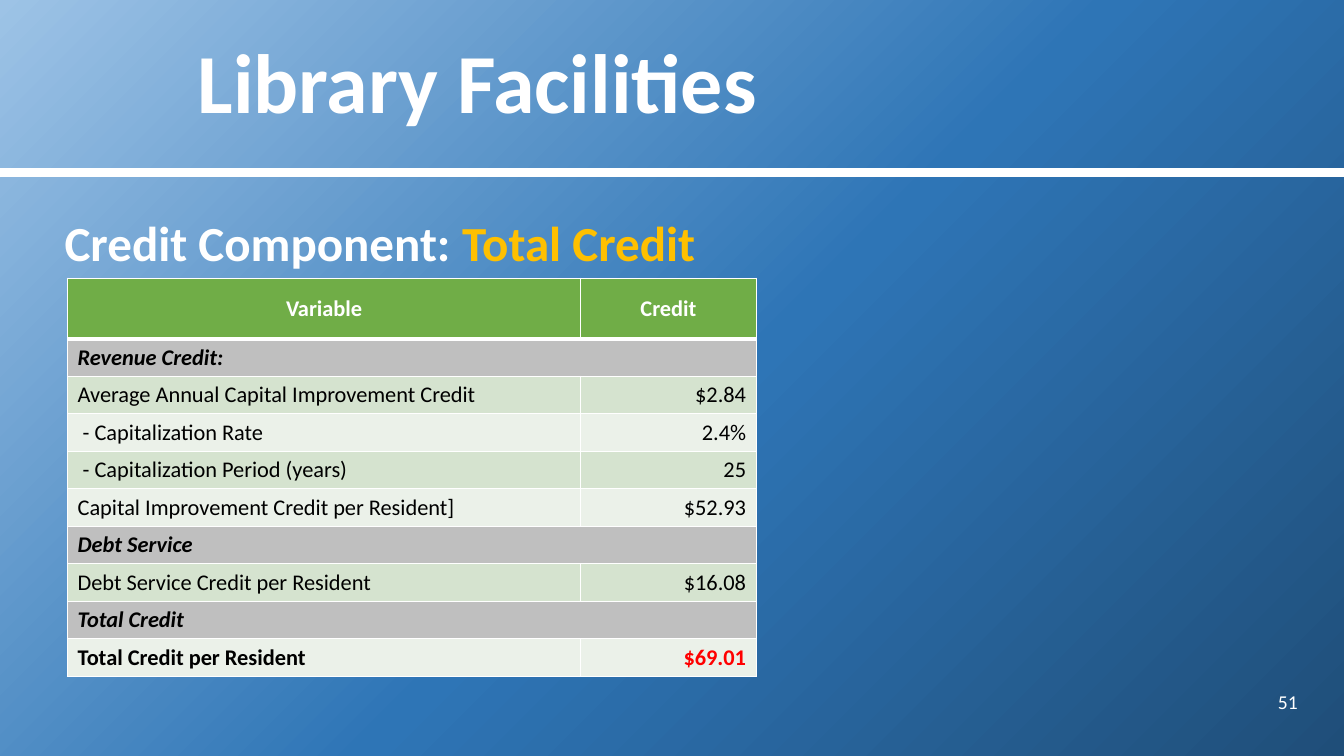
from pptx import Presentation
from pptx.dml.color import RGBColor
from pptx.enum.shapes import MSO_CONNECTOR
from pptx.enum.text import MSO_ANCHOR, MSO_AUTO_SIZE, PP_ALIGN
from pptx.oxml import parse_xml
from pptx.oxml.ns import nsdecls, qn
from pptx.util import Inches, Pt

WHITE = RGBColor(0xFF, 0xFF, 0xFF)
BLACK = RGBColor(0, 0, 0)
RED = RGBColor(0xFF, 0, 0)
GOLD = RGBColor(0xFF, 0xC0, 0)
GREEN = RGBColor(0x70, 0xAD, 0x47)
GRAY = RGBColor(0xBF, 0xBF, 0xBF)
DARK_BAND = RGBColor(0xD5, 0xE3, 0xCF)
LIGHT_BAND = RGBColor(0xEB, 0xF1, 0xE9)
SKY = RGBColor(0x9D, 0xC3, 0xE6)
BLUE = RGBColor(0x2E, 0x75, 0xB6)
NAVY = RGBColor(0x1F, 0x4E, 0x79)


def place(shape, left, top, width, height, anchor):
    bounds = {"left": left, "top": top, "width": width, "height": height}
    for name, value in bounds.items():
        setattr(shape, name, Inches(value))
    layout = {"word_wrap": True, "auto_size": MSO_AUTO_SIZE.NONE, "vertical_anchor": anchor}
    for name, value in layout.items():
        setattr(shape.text_frame, name, value)
    return shape.text_frame.paragraphs[0]


def write(para, text, size, color, bold=False, italic=False):
    span = para.add_run()
    span.text = text
    styles = {"name": "Calibri", "size": Pt(size), "bold": bold, "italic": italic}
    for name, value in styles.items():
        setattr(span.font, name, value)
    span.font.color.rgb = color
    return span


deck = Presentation()
deck.slide_width = Inches(13.33)
deck.slide_height = Inches(7.5)
page = deck.slides.add_slide(deck.slide_layouts[1])

page.background.fill.gradient()
stops = "".join(
    f'<a:gs pos="{share * 1000}"><a:srgbClr val="{color}"/></a:gs>'
    for share, color in [(0, SKY), (53, BLUE), (100, NAVY)]
)
gradient = page.element.find(".//" + qn("a:gradFill"))
gradient.getparent().replace(gradient, parse_xml(
    f'<a:gradFill {nsdecls("a")} rotWithShape="1"><a:gsLst>{stops}</a:gsLst>'
    '<a:path path="circle"><a:fillToRect r="100000" b="100000"/></a:path></a:gradFill>'
))

rule = page.shapes.add_connector(
    MSO_CONNECTOR.STRAIGHT, Inches(-0.02), Inches(1.71), Inches(13.33), Inches(1.71))
rule.line.color.rgb = WHITE
rule.line.width = Pt(6)
rule.element.spPr.append(parse_xml(f'<a:effectLst {nsdecls("a")}/>'))

para = place(page.shapes.title, 1.86, 0, 11.1, 1.71, MSO_ANCHOR.MIDDLE)
para.alignment = PP_ALIGN.LEFT
para.line_spacing = 0.9
span = write(para, "Library Facilities", 60, WHITE, bold=True)
span.font.fill._xPr.find(qn("a:solidFill")).addnext(parse_xml(
    f'<a:effectLst {nsdecls("a")}><a:outerShdw blurRad="38100" dist="38100" dir="2700000">'
    '<a:srgbClr val="000000"><a:alpha val="43000"/></a:srgbClr></a:outerShdw></a:effectLst>'
))

para = place(page.placeholders[1], 0.54, 1.94, 12.42, 5.27, MSO_ANCHOR.TOP)
properties = para._p.get_or_add_pPr()
properties.set("marL", "0")
properties.set("indent", "0")
properties.append(parse_xml(f'<a:buNone {nsdecls("a")}/>'))
para.alignment = PP_ALIGN.LEFT
para.line_spacing = 1.2
para.space_before = Pt(0)
write(para, "Credit Component: ", 35, WHITE, bold=True)
write(para, "Total Credit", 35, GOLD, bold=True)

box = page.shapes.add_textbox(0, 0, 0, 0)
para = place(box, 12.08, 6.76, 0.89, 0.4, MSO_ANCHOR.MIDDLE)
para.alignment = PP_ALIGN.RIGHT
write(para, "51", 14, WHITE)

rows = [
    ("Variable", "Credit"),
    ("Revenue Credit:", None),
    ("Average Annual Capital Improvement Credit", "$2.84"),
    (" - Capitalization Rate", "2.4%"),
    (" - Capitalization Period (years)", "25"),
    ("Capital Improvement Credit per Resident]", "$52.93"),
    ("Debt Service", None),
    ("Debt Service Credit per Resident", "$16.08"),
    ("Total Credit", None),
    ("Total Credit per Resident", "$69.01"),
]
last = len(rows) - 1
table = page.shapes.add_table(
    len(rows), 2, Inches(0.67), Inches(2.76), Inches(6.83), Inches(3.93)).table
table.columns[0].width = Inches(5.09)
table.columns[1].width = Inches(1.74)

for row, texts in enumerate(rows):
    table.rows[row].height = Inches(0.37 if row else 0.6)
    header = row == 0
    section = texts[1] is None
    if section:
        table.cell(row, 0).merge(table.cell(row, 1))
    for column, text in enumerate(texts):
        cell = table.cell(row, column)
        for side in "LRTB":
            heavy = (row, side) in [(0, "B"), (1, "T")]
            cell._tc.get_or_add_tcPr().append(parse_xml(
                f'<a:ln{side} {nsdecls("a")} w="{Pt(3 if heavy else 1)}">'
                f'<a:solidFill><a:srgbClr val="{WHITE}"/></a:solidFill></a:ln{side}>'
            ))
        cell.fill.solid()
        band = LIGHT_BAND if row % 2 else DARK_BAND
        if row == 7:
            band = DARK_BAND
        cell.fill.fore_color.rgb = GREEN if header else GRAY if section else band
        if text is None:
            continue
        cell.vertical_anchor = MSO_ANCHOR.MIDDLE if header else MSO_ANCHOR.TOP
        para = cell.text_frame.paragraphs[0]
        value_side = PP_ALIGN.RIGHT if column else PP_ALIGN.LEFT
        para.alignment = PP_ALIGN.CENTER if header else value_side
        color = WHITE if header else RED if (row, column) == (last, 1) else BLACK
        write(para, text, 16, color, bold=header or section or row == last, italic=section)

deck.save("out.pptx")
